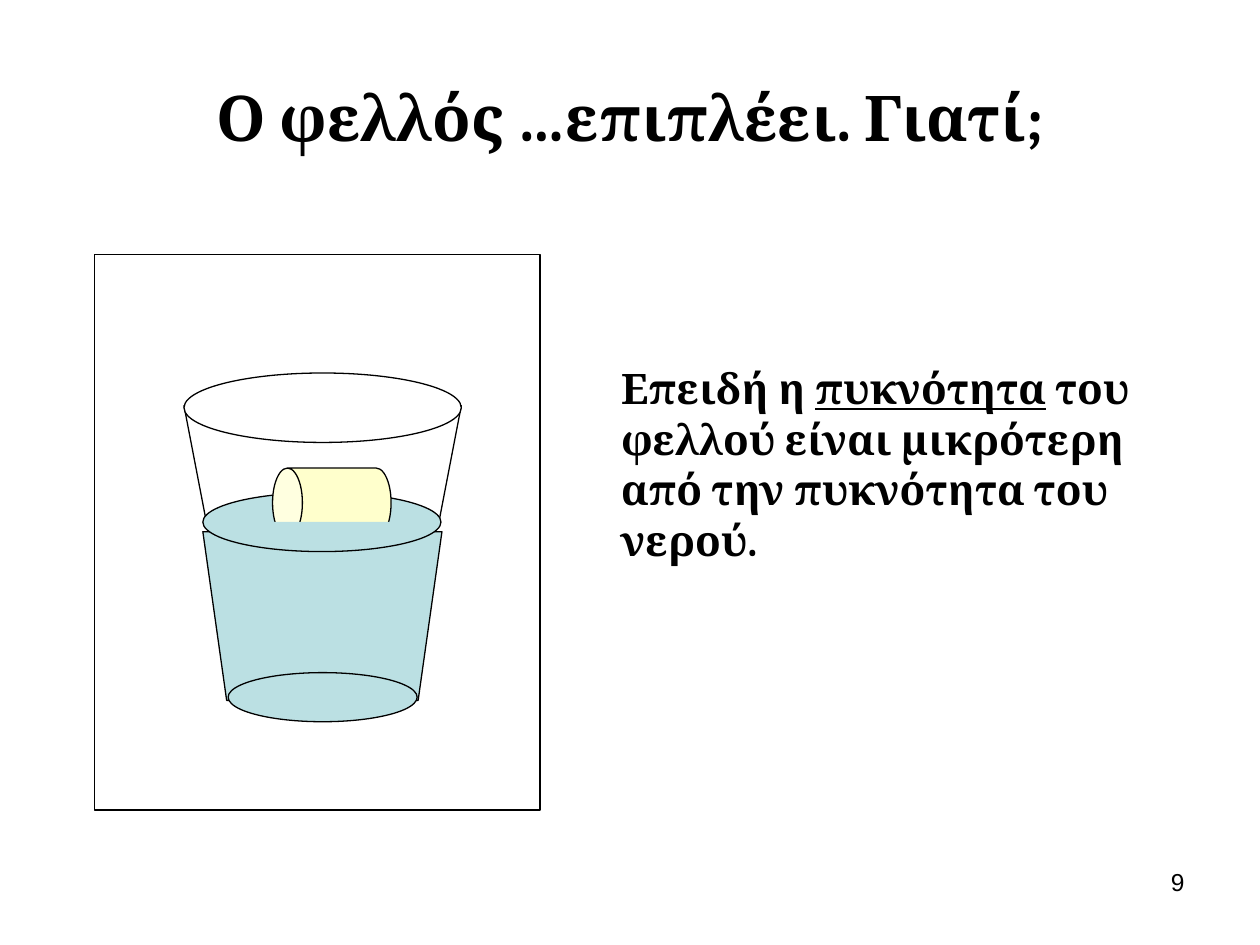
import pptx
import pptx.dml.color
import pptx.enum.shapes
import pptx.enum.text
import pptx.util

Cm = pptx.util.Cm
Pt = pptx.util.Pt
Shape = pptx.enum.shapes.MSO_SHAPE
Align = pptx.enum.text.PP_ALIGN
Anchor = pptx.enum.text.MSO_ANCHOR

COLOURS = {"ink": "000000", "paper": "FFFFFF", "water": "BBE0E3", "cork": "FFFFCC"}


def colour(name):
    return pptx.dml.color.RGBColor.from_string(COLOURS[name])


def paint(shape, fill, outlined=True):
    shape.shadow.inherit = False
    if fill:
        shape.fill.solid()
        shape.fill.fore_color.rgb = colour(fill)
    else:
        shape.fill.background()
    if outlined:
        shape.line.color.rgb = colour("ink")
        shape.line.width = Pt(0.75)
    else:
        shape.line.fill.background()


def add_preset(shapes, kind, place, fill, outlined=True):
    shape = shapes.add_shape(kind, *map(Cm, place))
    paint(shape, fill, outlined)
    return shape


def add_tapered_side(shapes, top, bottom, fill):
    (top_left, top_right, top_y), (bottom_left, bottom_right, bottom_y) = top, bottom
    builder = shapes.build_freeform(Cm(top_left), Cm(top_y))
    corners = [(bottom_left, bottom_y), (bottom_right, bottom_y), (top_right, top_y)]
    builder.add_line_segments([(Cm(x), Cm(y)) for x, y in corners], close=True)
    paint(builder.convert_to_shape(), fill)


def add_text(page, place, spans, font_format, align=Align.LEFT, anchor=Anchor.TOP):
    box = page.shapes.add_textbox(*map(Cm, place))
    frame = box.text_frame
    frame.word_wrap = True
    frame.vertical_anchor = anchor
    para = frame.paragraphs[0]
    para.alignment = align
    for text, underlined in spans:
        span = para.add_run()
        span.text = text
        for name, value in font_format.items():
            setattr(span.font, name, value)
        span.font.underline = underlined
        span.font.color.rgb = colour("ink")


def add_glass_with_cork(page):
    shapes = page.shapes.add_group_shape().shapes
    add_tapered_side(shapes, (3.71, 9.3, 8.18), (4.17, 8.84, 10.57), None)
    add_preset(shapes, Shape.OVAL, (3.71, 7.52, 5.59, 1.4), "paper")
    add_tapered_side(shapes, (4.09, 8.91, 10.72), (4.57, 8.43, 14.12), "water")
    add_preset(shapes, Shape.OVAL, (4.6, 13.56, 3.81, 0.99), "water")
    add_preset(shapes, Shape.OVAL, (4.09, 9.93, 4.8, 1.19), "water")
    cork = add_preset(shapes, Shape.CAN, (5.99, 8.94, 1.4, 2.39), "cork")
    cork.adjustments[0] = 0.43
    cork.rotation = 270
    add_preset(shapes, Shape.RECTANGLE, (5.51, 10.52, 2.39, 0.41), "water", outlined=False)


def main():
    deck = pptx.Presentation()
    deck.slide_width, deck.slide_height = Cm(25.4), Cm(19.05)
    page = deck.slides.add_slide(deck.slide_layouts[6])

    add_preset(page.shapes, Shape.RECTANGLE, (1.9, 5.13, 8.99, 11.2), "paper")
    add_glass_with_cork(page)

    explanation = [
        ("Επειδή η ", False),
        ("πυκνότητα", True),
        (" του φελλού είναι μικρότερη από την πυκνότητα του νερού.", False),
    ]
    add_text(page, (12.27, 7.19, 11.2, 4.37), explanation,
             {"name": "Cambria", "size": Pt(24), "bold": True})
    add_text(page, (1.27, 0.76, 22.86, 3.18), [("Ο φελλός …επιπλέει. Γιατί;", False)],
             {"name": "Cambria", "size": Pt(36), "bold": True},
             Align.CENTER, Anchor.MIDDLE)
    add_text(page, (18.21, 17.35, 5.92, 1.32), [("9", False)],
             {"name": "Arial", "size": Pt(14)}, Align.RIGHT)

    deck.save("out.pptx")


if __name__ == "__main__":
    main()
